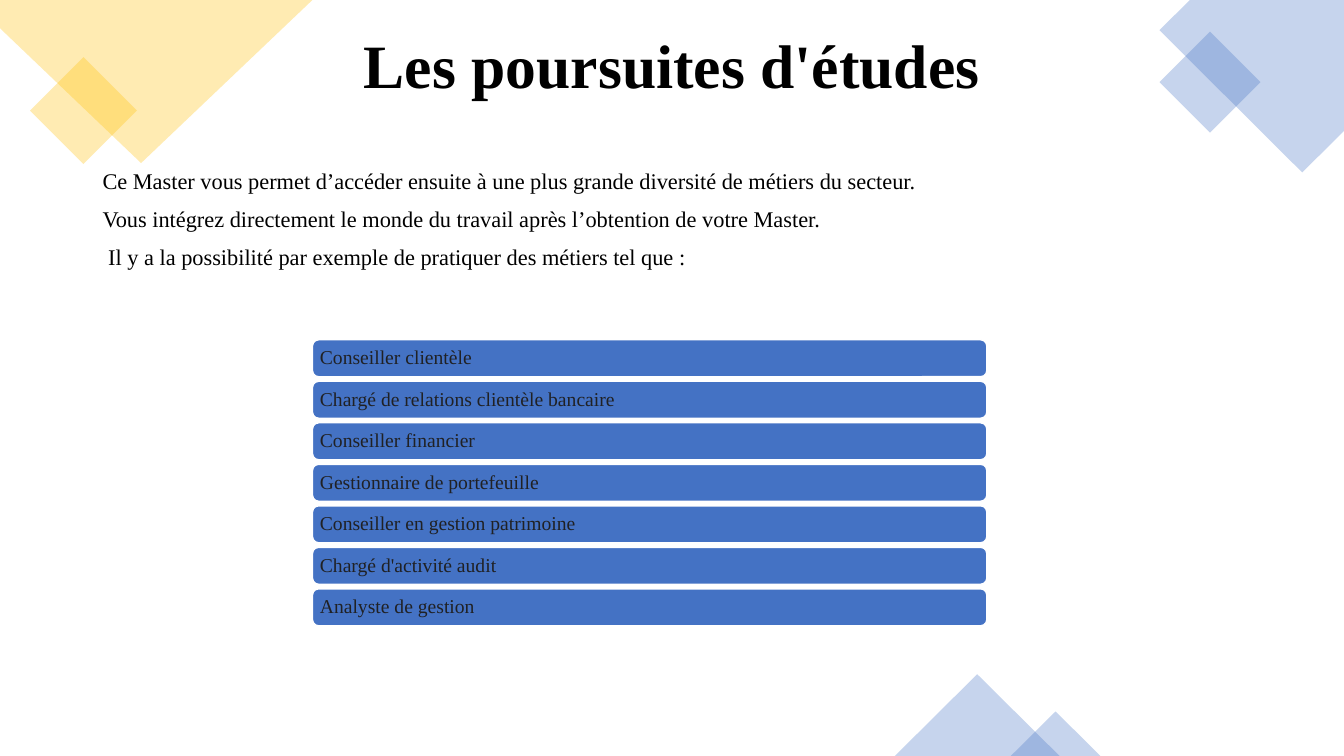
from lxml import etree
from pptx import Presentation
from pptx.dml.color import RGBColor
from pptx.enum import shapes, text
from pptx.oxml.ns import qn
from pptx.util import Pt

# Content
TITLE = "Les poursuites d'études"
INTRO = [
    "Ce Master vous permet d’accéder ensuite à une plus grande diversité de métiers du secteur.",
    "Vous intégrez directement le monde du travail après l’obtention de votre Master.",
    " Il y a la possibilité par exemple de pratiquer des métiers tel que :",
]
JOBS = [
    "Conseiller clientèle",
    "Chargé de relations clientèle bancaire",
    "Conseiller financier",
    "Gestionnaire de portefeuille",
    "Conseiller en gestion patrimoine",
    "Chargé d'activité audit",
    "Analyste de gestion",
]

THEME = {
    "font": "Times New Roman", "title": 44, "body": 16, "job": 14,
    "black": "000000", "dark": "202124", "white": "FFFFFF",
    "gold": "FFC000", "blue": "4472C4", "alpha": 30,
}

# Corner decoration: kind, left, top, width, height, turn, colour
RECT = shapes.MSO_SHAPE.RECTANGLE
PEAK = shapes.MSO_SHAPE.ISOSCELES_TRIANGLE
DECOR = [
    (RECT, 32.6, 52, 54, 54, 45, "gold"),
    (RECT, 838.8, 33.2, 51, 51, 45, "blue"),
    (PEAK, 639.2, 481.6, 117.6, 58.4, 0, "blue"),
    (PEAK, 722, 508.2, 64, 31.8, 0, "blue"),
]
CORNERS = [
    ("gold", [(0, 0), (223.2, 0), (100.8, 116.5), (0, 20.2)]),
    ("blue", [(850, 0), (960, 0), (960, 93.6), (930.2, 123.2), (828.2, 21.6)]),
]

# Layout
WIDE, HIGH = 960, 540
LEFT, SPAN = 66.2, 828
BAR = {"left": 223.2, "top": 242.7, "width": 481.7, "height": 26.4}
STEP = 29.65

deck = Presentation()
deck.slide_width, deck.slide_height = Pt(WIDE), Pt(HIGH)
slide = deck.slides.add_slide(deck.slide_layouts[6])


def color(name):
    return RGBColor.from_string(THEME[name])


def tint(shape, name, clear=False):
    shape.shadow.inherit = False
    shape.fill.solid()
    shape.fill.fore_color.rgb = color(name)
    shape.line.fill.background()
    if clear:
        rgb = shape.fill._xPr.find(".//" + qn("a:srgbClr"))
        etree.SubElement(rgb, qn("a:alpha")).set("val", str(THEME["alpha"] * 1000))


def write(shape, lines, size, ink, bold=False, align=text.PP_ALIGN.LEFT,
          anchor=text.MSO_ANCHOR.MIDDLE, before=0):
    frame = shape.text_frame
    frame.word_wrap = True
    frame.vertical_anchor = anchor
    frame.text = "\n".join(lines)
    for para in frame.paragraphs:
        para.alignment = align
        para.line_spacing = 0.9
        para.space_before = Pt(before)
        for run in para.runs:
            run.font.name = THEME["font"]
            run.font.size = Pt(THEME[size])
            run.font.bold = bold
            run.font.color.rgb = color(ink)


def box(top, height):
    return slide.shapes.add_textbox(Pt(LEFT), Pt(top), Pt(SPAN), Pt(height))


# Corner shapes
for name, dots in CORNERS:
    dots = [(Pt(x), Pt(y)) for x, y in dots]
    form = slide.shapes.build_freeform(*dots[0])
    form.add_line_segments(dots[1:], close=True)
    tint(form.convert_to_shape(), name, clear=True)

for kind, left, top, width, height, turn, name in DECOR:
    shape = slide.shapes.add_shape(kind, Pt(left), Pt(top), Pt(width), Pt(height))
    shape.rotation = turn
    tint(shape, name, clear=True)

# Title and introduction
write(box(3.6, 90), [TITLE], "title", "black", bold=True,
      align=text.PP_ALIGN.CENTER)
write(box(118, 421), INTRO, "body", "black", anchor=text.MSO_ANCHOR.TOP, before=10)

# Job bars
for row, job in enumerate(JOBS):
    bar = slide.shapes.add_shape(
        shapes.MSO_SHAPE.ROUNDED_RECTANGLE, Pt(BAR["left"]),
        Pt(BAR["top"] + row * STEP), Pt(BAR["width"]), Pt(BAR["height"]))
    tint(bar, "blue")
    bar.line.color.rgb = color("white")
    bar.line.width = Pt(1)
    frame = bar.text_frame
    frame.margin_left = frame.margin_right = Pt(4)
    frame.margin_top = frame.margin_bottom = Pt(4)
    write(bar, [job], "job", "dark")

deck.save("out.pptx")
